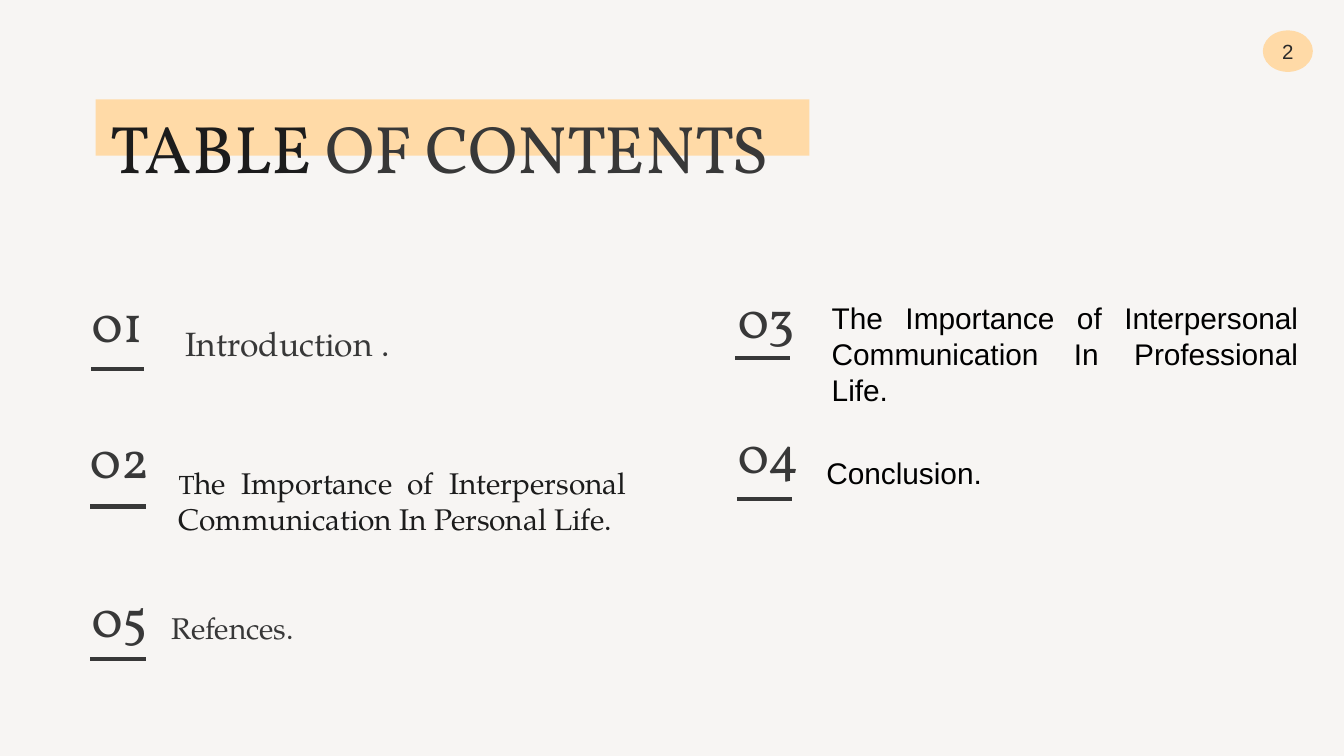
from lxml.etree import SubElement
from pptx import Presentation
from pptx.dml.color import RGBColor
from pptx.enum.shapes import MSO_CONNECTOR, MSO_SHAPE
from pptx.enum.text import MSO_ANCHOR, PP_ALIGN
from pptx.oxml.ns import qn
from pptx.util import Pt

COLORS = {"paper": "F7F5F3", "peach": "FFDAA7", "ink": "1C1C1C",
          "gray": "383838", "page": "2A2A2A", "black": "000000"}
TITLE, SERIF, SANS = "Vollkorn", "TeX Gyre Pagella", "Arial"


def add_text(s, box, runs, font, anchor=MSO_ANCHOR.MIDDLE, align=PP_ALIGN.LEFT, inset=7.2):
    """Add a text box; each run is (text, size, color)."""
    tf = s.shapes.add_textbox(*map(Pt, box)).text_frame
    tf.word_wrap = True
    tf.vertical_anchor = anchor
    tf.margin_top = tf.margin_bottom = Pt(inset)
    p = tf.paragraphs[0]
    p.alignment = align
    for text, size, color in runs:
        r = p.add_run()
        r.text = text
        r.font.name = font
        r.font.size = Pt(size)
        r.font.color.rgb = RGBColor.from_string(COLORS[color])


def add_peach(s, kind, box):
    sp = s.shapes.add_shape(kind, *map(Pt, box))
    sp.shadow.inherit = False
    sp.fill.solid()
    sp.fill.fore_color.rgb = RGBColor.from_string(COLORS["peach"])
    sp.line.fill.background()
    return sp


prs = Presentation()
prs.slide_width, prs.slide_height = Pt(720), Pt(405)
s = prs.slides.add_slide(prs.slide_layouts[6])
s.background.fill.solid()
s.background.fill.fore_color.rgb = RGBColor.from_string(COLORS["paper"])

# Heading over its highlight band
add_peach(s, MSO_SHAPE.RECTANGLE, (51.2, 53.2, 382.5, 30.2))
add_text(s, (52, 49.7, 455, 45.4),
         [("TABLE", 36, "ink"), (" OF CONTENTS", 36, "gray")], TITLE, MSO_ANCHOR.TOP)

# Contents: number, number box, underline (x1, x2, y)
numbers = [
    ("01", (41.8, 146.2, 58.3, 52.6), (49, 77, 197.9)),
    ("02", (41, 222.5, 58.3, 45.4), (48.5, 78, 271.4)),
    ("03", (388.1, 141.8, 59, 56.2), (393.8, 423.3, 191.7)),
    ("04", (388.1, 215.3, 67.7, 54.7), (394.8, 424.3, 267.5)),
    ("05", (41.8, 307.4, 58.3, 45.4), (48.5, 78, 353.2)),
]
for number, box, (x1, x2, y) in numbers:
    add_text(s, box, [(number, 28, "gray")], TITLE)
    rule = s.shapes.add_connector(MSO_CONNECTOR.STRAIGHT, Pt(x1), Pt(y), Pt(x2), Pt(y))
    rule.line.color.rgb = RGBColor.from_string(COLORS["gray"])
    rule.line.width = Pt(2.25)
    SubElement(rule._element.spPr, qn("a:effectLst"))

# Section names
add_text(s, (92.2, 165.6, 187.2, 36), [("Introduction .", 18, "gray")], SERIF)
add_text(s, (88.6, 256.3, 254.2, 23.8),
         [("T", 14, "ink"),
          ("he Importance of Interpersonal Communication In Personal Life.", 16, "ink")],
         SERIF, align=PP_ALIGN.JUSTIFY)
add_text(s, (85, 321.1, 205.2, 30.2), [("Refences.", 16, "gray")], SERIF)
add_text(s, (438.5, 157, 264.2, 65.5),
         [("The Importance of Interpersonal Communication In Professional Life.", 16, "black")],
         SANS, MSO_ANCHOR.TOP, PP_ALIGN.JUSTIFY, inset=3.6)
add_text(s, (435.6, 239.8, 126.7, 26.6), [("Conclusion.", 16, "black")],
         SANS, MSO_ANCHOR.TOP, inset=3.6)

# Page number badge
badge = add_peach(s, MSO_SHAPE.OVAL, (677.5, 17.3, 24.8, 20.2))
badge.line.color.rgb = RGBColor.from_string(COLORS["peach"])
badge.line.width = Pt(2)
tf = badge.text_frame
tf.text = "2"
tf.word_wrap = False
tf.vertical_anchor = MSO_ANCHOR.MIDDLE
p = tf.paragraphs[0]
p.alignment = PP_ALIGN.CENTER
r = p.runs[0]
r.font.name = SANS
r.font.size = Pt(11)
r.font.color.rgb = RGBColor.from_string(COLORS["page"])

prs.save("out.pptx")
